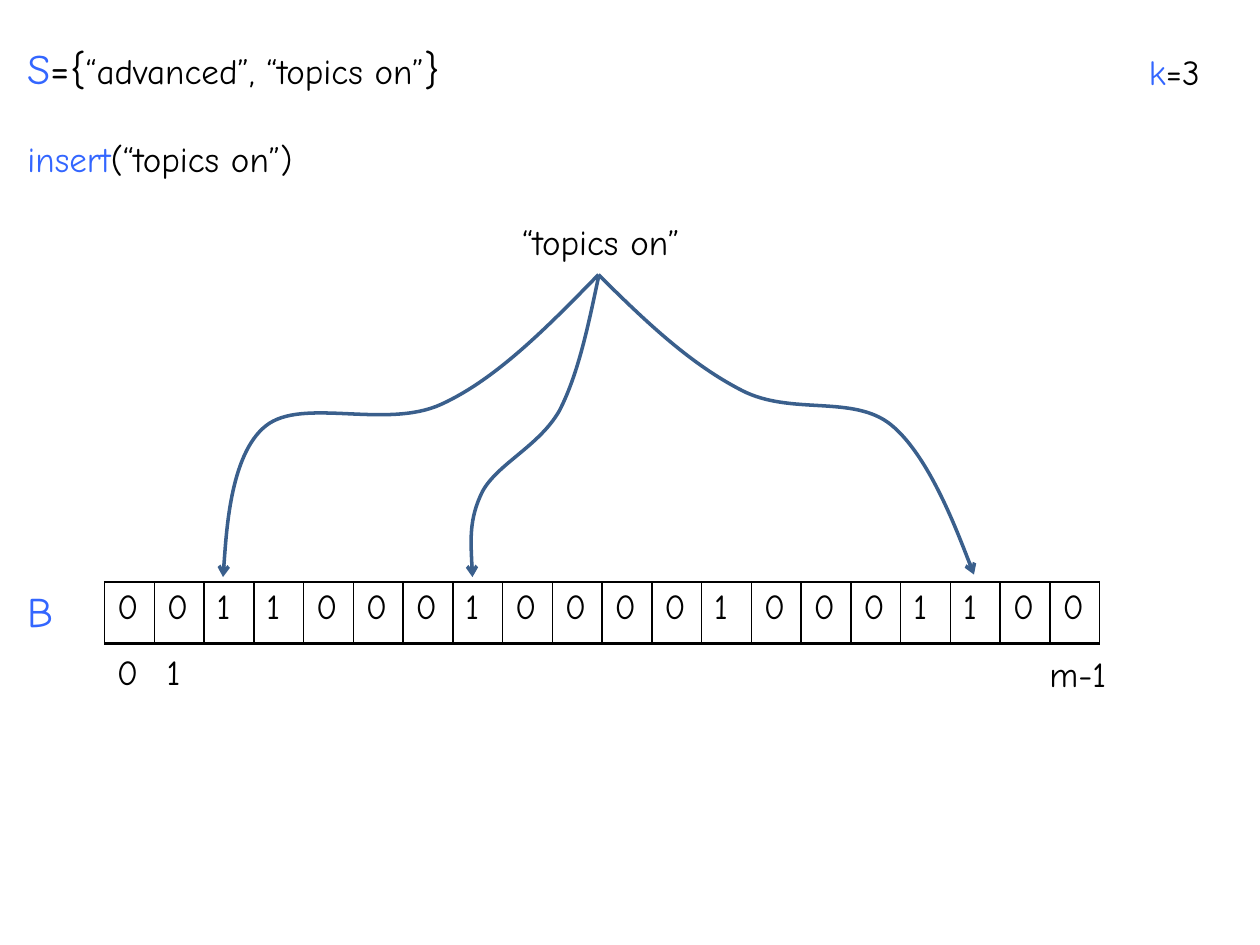
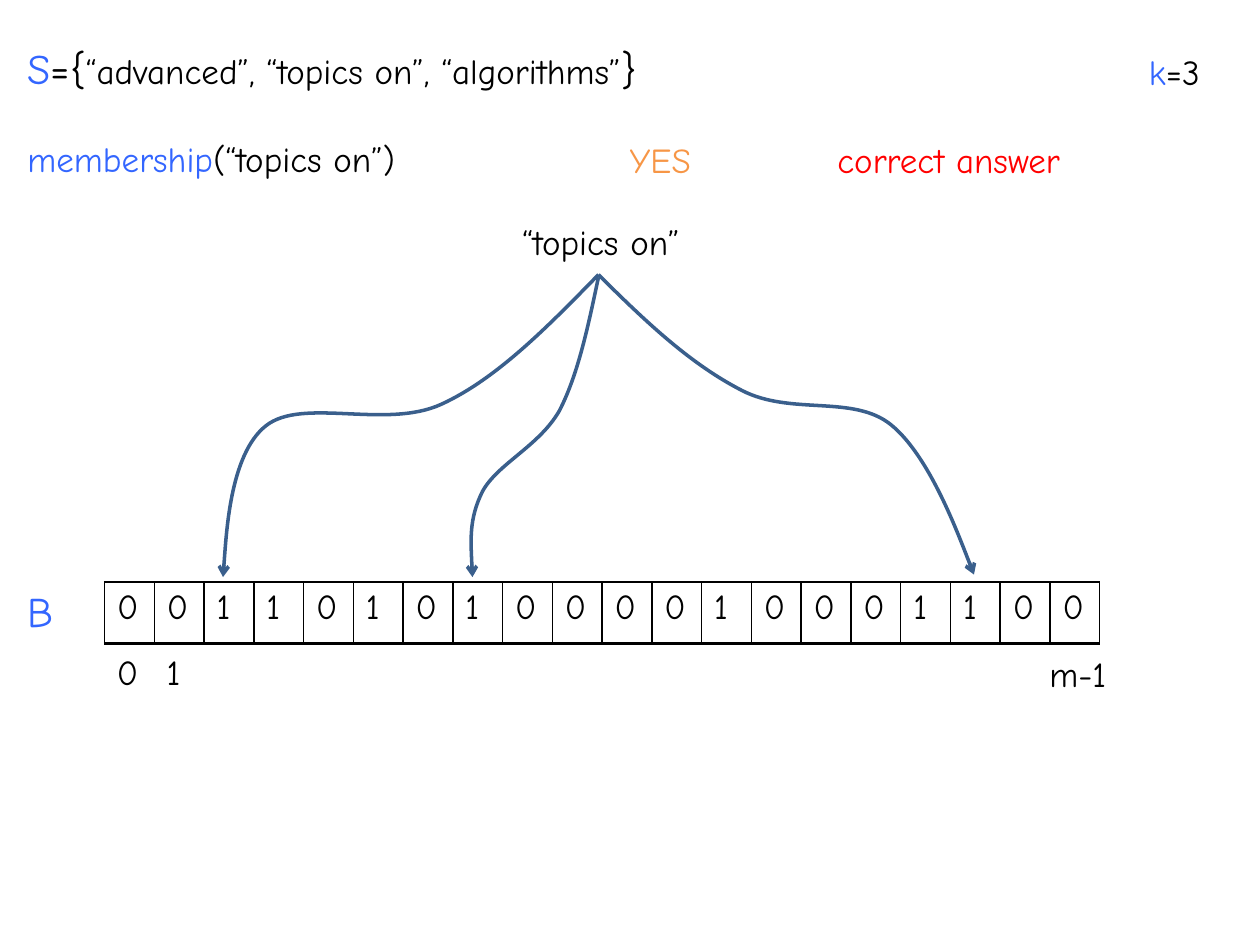
from lxml.etree import SubElement
from pptx import Presentation
from pptx.dml.color import RGBColor
from pptx.enum.text import MSO_AUTO_SIZE, PP_ALIGN
from pptx.oxml import parse_xml
from pptx.oxml.ns import nsdecls, qn
from pptx.util import Inches, Pt

FONT = "Comic Neue"
BLACK = RGBColor(0x00, 0x00, 0x00)
BLUE = RGBColor(0x33, 0x66, 0xFF)
ORANGE = RGBColor(0xF7, 0x96, 0x46)
RED = RGBColor(0xFF, 0x00, 0x00)
ARROW_BLUE = RGBColor(0x3A, 0x5F, 0x8C)

presentation = Presentation()
presentation.slide_width = Inches(10)
presentation.slide_height = Inches(7.5)

# The slide is a grid of 100 columns and 75 rows of equal steps
STEP = presentation.slide_width // 100
MARGIN = 1.2
ARRAY_LEFT, ARRAY_TOP, ARRAY_WIDTH, ARRAY_HEIGHT = 8.3, 46.2, 79, 4.9
INDEX_TOP = ARRAY_TOP + ARRAY_HEIGHT
BORDERS = {"a:lnL": 1, "a:lnR": 1, "a:lnT": 1, "a:lnB": 2}

# Each hash arrow: a start point, then two control points and an end per curve
HASH_ARROWS = [
    [(47.5, 21.8), (43.5, 25.9), (39.4, 30.1), (35, 32.1),
     (30.6, 34.1), (24, 31.5), (21.1, 33.8), (18.2, 36.1), (17.7, 45.8), (17.7, 45.8)],
    [(47.5, 21.8), (51.6, 25.9), (55, 29), (58.9, 31),
     (62.8, 33), (67.7, 31.3), (70.7, 33.7), (73.8, 36.2), (77.3, 45.6), (77.3, 45.6)],
    [(47.5, 22), (46.7, 25.8), (45.9, 29.7), (44.4, 32.6),
     (42.8, 35.4), (39.5, 36.8), (38.3, 39), (37.2, 41.2), (37.4, 43.5), (37.5, 45.8)],
]

# Text boxes: left, top, width, height, alignment, runs of (text, size, colour)
LEFT, CENTER = PP_ALIGN.LEFT, PP_ALIGN.CENTER
SHARED_TEXTS = [
    (MARGIN, 46, 4.7, 5, LEFT, [("B", 24, BLUE)]),
    (ARRAY_LEFT, INDEX_TOP, 4.7, 4.4, LEFT, [("0", 20, BLACK)]),
    (ARRAY_LEFT + ARRAY_WIDTH / 20, INDEX_TOP, 4.7, 4.4, LEFT, [("1", 20, BLACK)]),
    (82.3, 51.3, 8.1, 4.4, LEFT, [("m-1", 20, BLACK)]),
    (36.7, 17, 22, 4.4, CENTER, [("“topics on”", 20, BLACK)]),
    (90.2, 3.5, 8.4, 4.4, LEFT, [("k", 20, BLUE), ("=3", 20, BLACK)]),
]
SLIDES = [
    {"members": "“advanced”, “topics on”", "operation": "insert",
     "bits": "00110001000010001100", "answers": []},
    {"members": "“advanced”, “topics on”, “algorithms”", "operation": "membership",
     "bits": "00110101000010001100",
     "answers": [(41.4, 10.5, 22, 4.4, CENTER, [("YES", 20, ORANGE)]),
                 (64.3, 10.5, 22, 4.4, CENTER, [("correct answer", 20, RED)])]},
]


def grid(*steps):
    return [round(step * STEP) for step in steps]


def add_runs(paragraph, runs):
    for text, size, colour in runs:
        run = paragraph.add_run()
        run.text = text
        for name, value in {"name": FONT, "size": Pt(size)}.items():
            setattr(run.font, name, value)
        run.font.color.rgb = colour


for content in SLIDES:
    slide = presentation.slides.add_slide(presentation.slide_layouts[6])

    # Bit array
    bits = content["bits"]
    table = slide.shapes.add_table(
        1, len(bits), *grid(ARRAY_LEFT, ARRAY_TOP, ARRAY_WIDTH, ARRAY_HEIGHT)).table
    table.first_row = table.horz_banding = False
    for cell, bit in zip(table.iter_cells(), bits):
        add_runs(cell.text_frame.paragraphs[0], [(bit, 20, BLACK)])
        properties = cell._tc.get_or_add_tcPr()
        for side, width in BORDERS.items():
            properties.append(parse_xml(
                f'<{side} {nsdecls("a")} w="{Pt(width)}"><a:solidFill>'
                f'<a:srgbClr val="{BLACK}"/></a:solidFill></{side}>'))
        cell.fill.background()

    # Set, operation, answers and labels
    headings = [
        (MARGIN, 2.9, 74, 5, LEFT, [("S", 24, BLUE), ("={", 24, BLACK),
                                   (content["members"], 20, BLACK), ("}", 24, BLACK)]),
        (MARGIN, 10.4, 46.4, 4.4, LEFT, [(content["operation"], 20, BLUE),
                                         ("(“topics on”)", 20, BLACK)]),
    ]
    for left, top, width, height, alignment, runs in headings + SHARED_TEXTS + content["answers"]:
        frame = slide.shapes.add_textbox(*grid(left, top, width, height)).text_frame
        frame.word_wrap = True
        frame.auto_size = MSO_AUTO_SIZE.SHAPE_TO_FIT_TEXT
        frame.paragraphs[0].alignment = alignment
        add_runs(frame.paragraphs[0], runs)

    # Curved hash arrows: every three line points become one cubic curve
    for start, *points in HASH_ARROWS:
        builder = slide.shapes.build_freeform(*grid(*start))
        builder.add_line_segments([grid(*point) for point in points], close=False)
        arrow = builder.convert_to_shape()
        arrow.shadow.inherit = False
        arrow.fill.background()
        arrow.line.color.rgb = ARROW_BLUE
        arrow.line.width = Pt(2)
        SubElement(arrow.line._get_or_add_ln(), qn("a:tailEnd"), type="arrow")
        outline = arrow._element.xpath(".//a:path")[0]
        segments = outline.findall(qn("a:lnTo"))
        for first in range(0, len(segments), 3):
            curve = SubElement(outline, qn("a:cubicBezTo"))
            for segment in segments[first:first + 3]:
                curve.append(segment[0])
                outline.remove(segment)

presentation.save("out.pptx")
